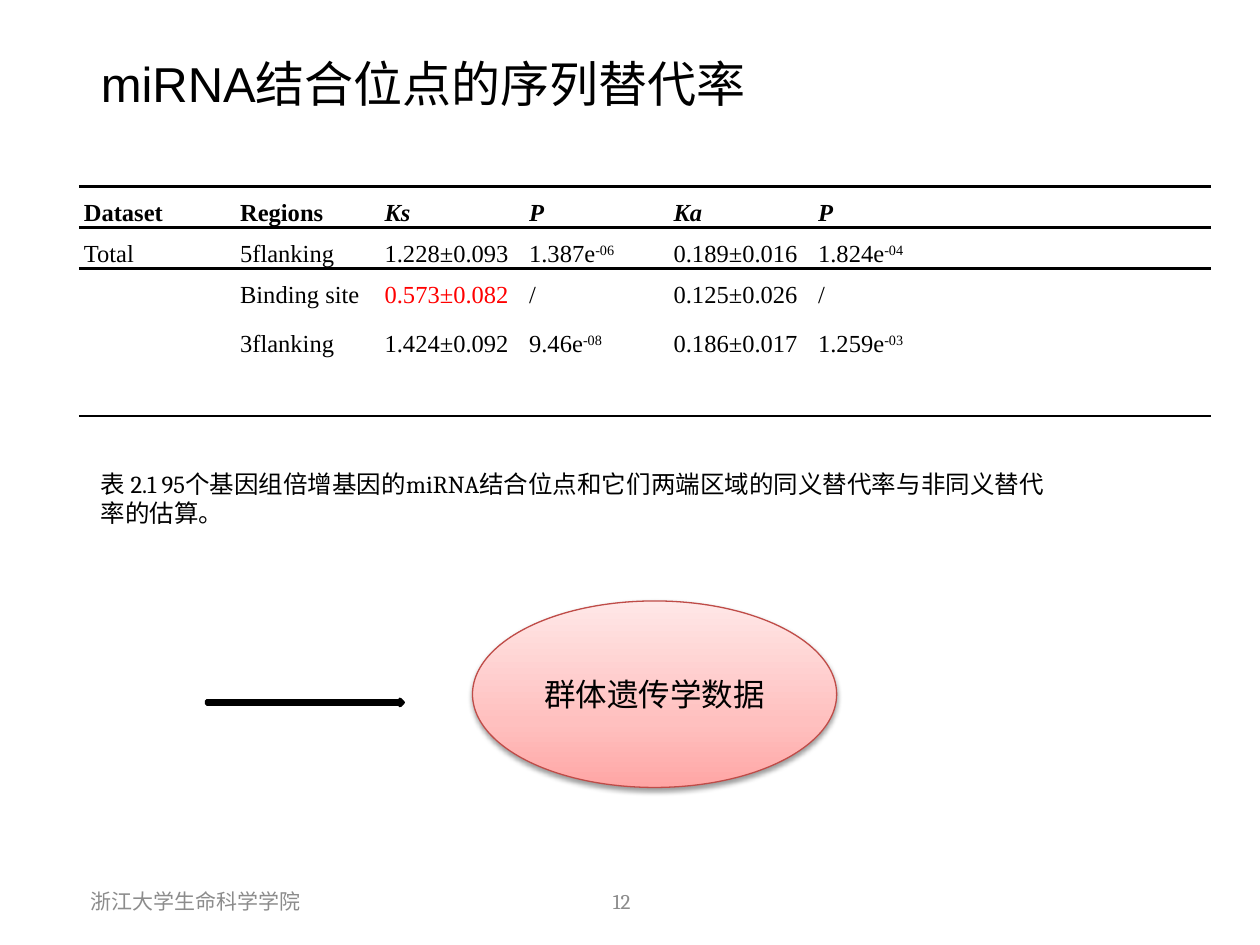
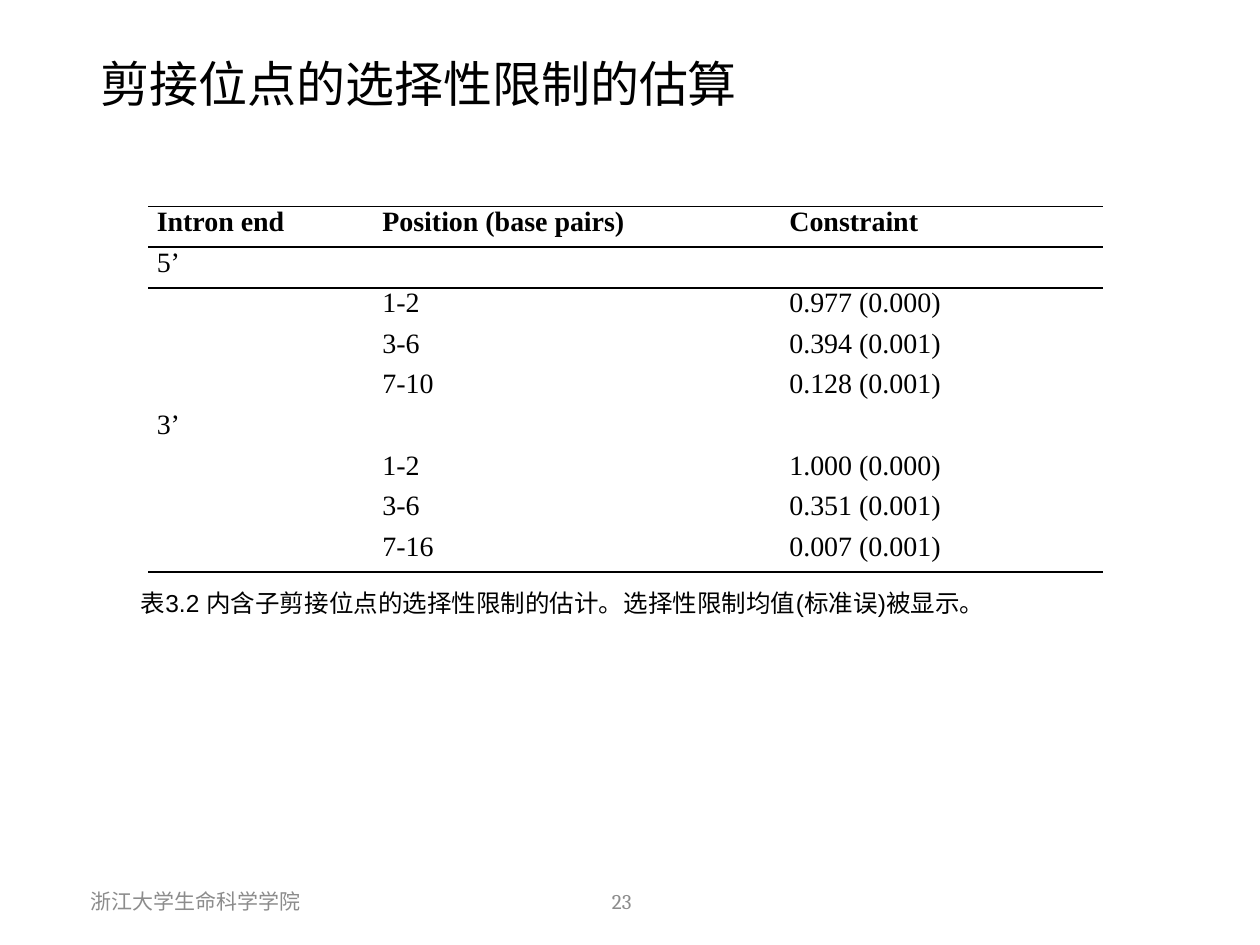
import copy

import pptx
import pptx.dml.color
import pptx.enum.shapes
import pptx.enum.text
import pptx.oxml
import pptx.util

Pt = pptx.util.Pt
Align = pptx.enum.text.PP_ALIGN
Anchor = pptx.enum.text.MSO_ANCHOR
Fit = pptx.enum.text.MSO_AUTO_SIZE
Shape = pptx.enum.shapes.MSO_SHAPE

NS = 'xmlns:a="http://schemas.openxmlformats.org/drawingml/2006/main"'
PLAIN = "{2D5ABB26-0587-4C30-8999-92F81FD0307C}"
BLACK, RED, GREY = "000000", "FF0000", "8C8C8C"
ROSE = "BF4C48"
BLUSH = [(0, "FFA6A5"), (0.35, "FFC0BF"), (1, "FFE7E7")]
SCHOOL = "浙江大学生命科学学院"

TITLE = {"size": Pt(28)}
FOOT = {"name": "Cambria", "size": Pt(12)}
NOTE = {"size": Pt(14)}
LABEL = {"name": "Cambria", "size": Pt(18)}

RATES = [
    ["Dataset", "Regions", "Ks", "P", "Ka", "P"],
    ["Total", "5flanking", "1.228±0.093", "1.387e^-06", "0.189±0.016", "1.824e^-04"],
    ["", "Binding site", "0.573±0.082", "/", "0.125±0.026", "/"],
    ["", "3flanking", "1.424±0.092", "9.46e^-08", "0.186±0.017", "1.259e^-03"],
    [""] * 6,
]
LIMITS = [
    ["Intron end", "Position (base pairs)", "Constraint"],
    ["5’", "", ""],
    ["", "1-2", "0.977 (0.000)"],
    ["", "3-6", "0.394 (0.001)"],
    ["", "7-10", "0.128 (0.001)"],
    ["3’", "", ""],
    ["", "1-2", "1.000 (0.000)"],
    ["", "3-6", "0.351 (0.001)"],
    ["", "7-16", "0.007 (0.001)"],
]


def hue(code):
    return pptx.dml.color.RGBColor.from_string(code)


def apply(item, values):
    for name, value in values.items():
        setattr(item, name, value)


def write(para, text, style, ink=BLACK):
    run = para.add_run()
    run.text = text
    apply(run.font, style)
    run.font.color.rgb = hue(ink)
    return run


def place(item, box):
    apply(item, dict(zip(("left", "top", "width", "height"), map(Pt, box))))


def add_page(deck, title, face, number):
    page = deck.slides.add_slide(deck.slide_layouts[5])
    head = page.shapes.title
    place(head, (50.4, 21.6, 633.6, 51.8))
    apply(head.text_frame, {"vertical_anchor": Anchor.MIDDLE, "word_wrap": True})
    para = head.text_frame.paragraphs[0]
    para.alignment = Align.LEFT
    write(para, title, {"name": face, **TITLE})
    add_text(page, (44.6, 500.4, 219.6, 28.8), SCHOOL, FOOT, GREY)
    add_text(page, (303.8, 500.4, 103, 28.8), number, FOOT, GREY, Align.CENTER)
    return page


def add_text(page, box, text, style, ink=BLACK, align=Align.LEFT, fit=Fit.NONE):
    frame = page.shapes.add_textbox(*map(Pt, box)).text_frame
    apply(frame, {"word_wrap": True, "auto_size": fit, "vertical_anchor": Anchor.MIDDLE})
    frame.paragraphs[0].alignment = align
    write(frame.paragraphs[0], text, style, ink)


def add_rules(cell, sides, width):
    for side in sides:
        line = pptx.oxml.parse_xml(
            f'<a:ln{side} {NS} w="{Pt(width)}"><a:solidFill>'
            f'<a:srgbClr val="{BLACK}"/></a:solidFill></a:ln{side}>')
        cell._tc.get_or_add_tcPr().insert(0, line)


def fill_cell(cell, text, style, inset, gap, ink):
    apply(cell, {"margin_left": Pt(inset), "margin_right": Pt(inset),
                 "margin_top": 0, "margin_bottom": 0})
    cell.fill.background()
    if not text:
        return
    para = cell.text_frame.paragraphs[0]
    apply(para, {"alignment": Align.JUSTIFY, "line_spacing": gap})
    base, _, power = text.partition("^")
    write(para, base, style, ink)
    if power:
        run = write(para, power, style, ink)
        run._r.get_or_add_rPr().set("baseline", "30000")


def add_grid(page, spot, cols, rows, data, size, inset, rule, gap=1, slant=(), marked=()):
    shape = page.shapes.add_table(len(rows), len(cols), *map(Pt, (*spot, sum(cols), sum(rows))))
    grid = shape.table
    apply(grid, {"first_row": False, "horz_banding": False})
    grid._tbl.tblPr[0].text = PLAIN
    for col, width in zip(grid.columns, cols):
        col.width = Pt(width)
    for row, height in zip(grid.rows, rows):
        row.height = Pt(height)
    edges = {0: "BT", 1: "T", len(rows) - 1: "B"}
    for r, line in enumerate(data):
        for c, text in enumerate(line):
            cell = grid.cell(r, c)
            style = {"name": "Times New Roman", "size": Pt(size),
                     "bold": r == 0, "italic": r == 0 and c in slant}
            fill_cell(cell, text, style, inset, gap, RED if (r, c) in marked else BLACK)
            add_rules(cell, edges.get(r, ""), rule)


def add_arrow(page, box):
    arrow = page.shapes.add_shape(Shape.RIGHT_ARROW, *map(Pt, box))
    arrow.shadow.inherit = False
    arrow.fill.solid()
    arrow.fill.fore_color.rgb = hue(BLACK)
    arrow.line.color.rgb = hue(BLACK)
    arrow.line.width = Pt(2)


def add_oval(page, box, text):
    oval = page.shapes.add_shape(Shape.OVAL, *map(Pt, box))
    oval.fill.gradient()
    oval.fill.gradient_angle = 90
    first = oval.fill.gradient_stops[0]._gs
    first.addnext(copy.deepcopy(first))
    for stop, (spot, code) in zip(oval.fill.gradient_stops, BLUSH):
        stop.position = spot
        stop.color.rgb = hue(code)
    oval.line.color.rgb = hue(ROSE)
    oval.line.width = Pt(0.75)
    oval.shadow.inherit = False
    shade = pptx.oxml.parse_xml(
        f'<a:outerShdw {NS} blurRad="{Pt(3.1)}" dist="{Pt(1.6)}" dir="5400000" rotWithShape="0">'
        f'<a:srgbClr val="{BLACK}"><a:alpha val="38000"/></a:srgbClr></a:outerShdw>')
    oval._element.spPr.find(pptx.oxml.ns.qn("a:effectLst")).append(shade)
    frame = oval.text_frame
    apply(frame, {"word_wrap": True, "vertical_anchor": Anchor.MIDDLE})
    frame.paragraphs[0].alignment = Align.CENTER
    write(frame.paragraphs[0], text, LABEL)


def main():
    deck = pptx.Presentation()
    apply(deck, {"slide_width": Pt(720), "slide_height": Pt(540)})

    page = add_page(deck, "miRNA结合位点的序列替代率", "Arial", "12")
    add_grid(page, (45, 106.6), [89.3] + [82.6] * 4 + [227.5], [23.4] * 2 + [28.1] * 3,
             RATES, 14, 2.9, 1.5, gap=1.5, slant=range(2, 6), marked=[(2, 2)])
    add_text(page, (50.4, 264.2, 562.3, 41),
             "表 2.1 95个基因组倍增基因的miRNA结合位点和它们两端区域的同义替代率与非同义替代率的估算。",
             {"name": "Cambria", **NOTE}, fit=Fit.SHAPE_TO_FIT_TEXT)
    add_arrow(page, (118.1, 399.6, 112.3, 3.6))
    add_oval(page, (270, 343.4, 208.1, 106.6), "群体遗传学数据")

    page = add_page(deck, "剪接位点的选择性限制的估算", "Calibri", "23")
    add_grid(page, (84.6, 118.1), [128.9, 232.6, 184.3], [23.2] * 9, LIMITS, 16, 5, 1)
    add_text(page, (73.4, 331.9, 528.5, 24.5),
             "表3.2 内含子剪接位点的选择性限制的估计。选择性限制均值(标准误)被显示。",
             {"name": "Arial", **NOTE}, fit=Fit.SHAPE_TO_FIT_TEXT)

    deck.save("out.pptx")


if __name__ == "__main__":
    main()
